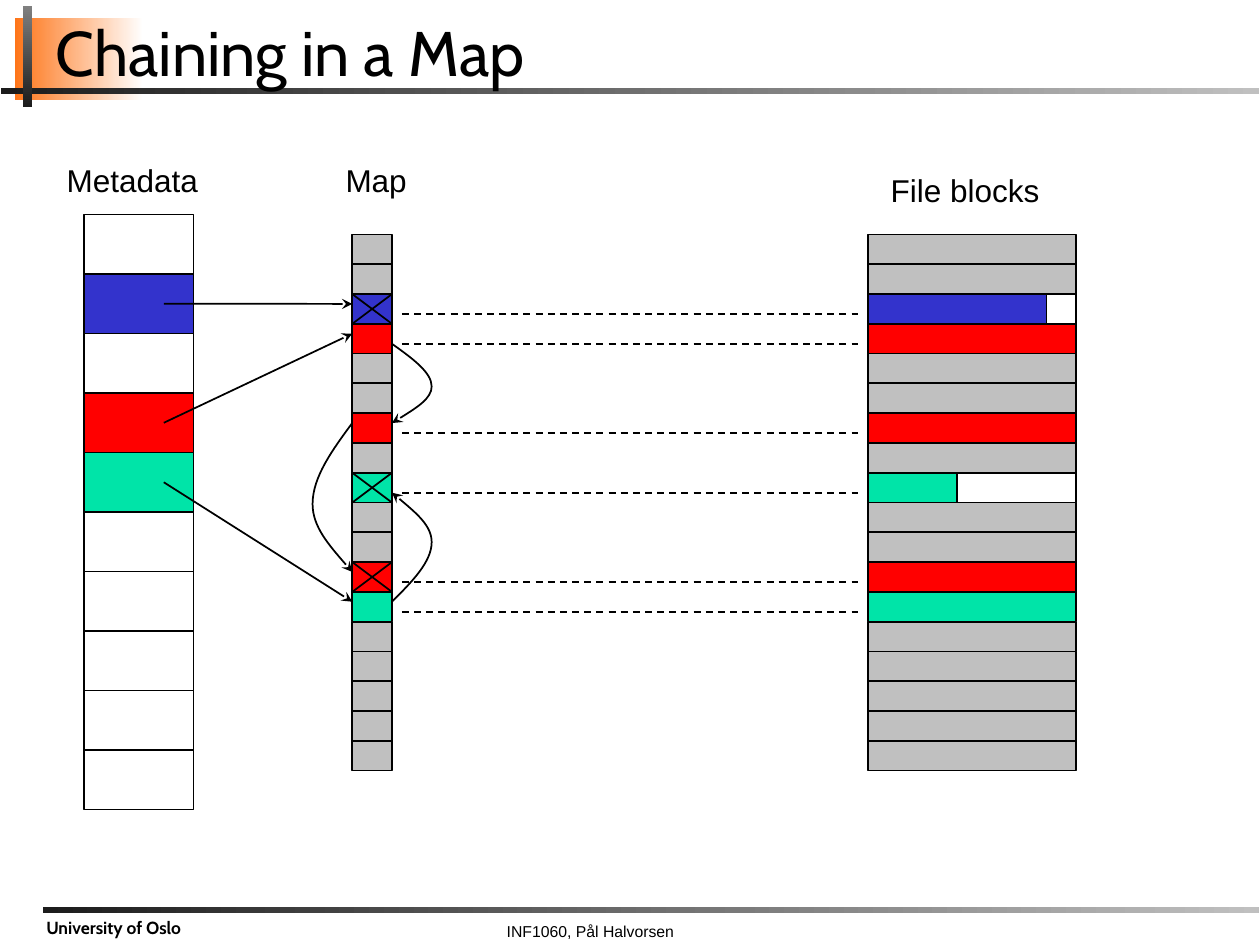
from lxml import etree
from pptx import Presentation
from pptx.dml.color import RGBColor
from pptx.enum.dml import MSO_LINE
from pptx.enum.shapes import MSO_CONNECTOR, MSO_SHAPE
from pptx.enum.text import MSO_ANCHOR, MSO_AUTO_SIZE, PP_ALIGN
from pptx.oxml.ns import qn
from pptx.util import Pt

COLORS = {
    "black": "000000", "dark": "1C1C1C", "mid": "808080", "grey": "C0C0C0",
    "orange": "FE7519", "white": "FFFFFF",
    "blue": "3333CC", "red": "FF0000", "green": "00E4A8",
}

META_LEFT, META_TOP, META_WIDTH, META_ROW = 48.2, 122.6, 62.4, 34
MAP_LEFT, MAP_RIGHT = 201.3, 224
BLOCK_LEFT, BLOCK_WIDTH = 496, 119
TOP, ROW, ROWS = 134, 17.02, 18
BULGE = 22.7

META_COLORS = {1: "blue", 3: "red", 4: "green"}
USED_ROWS = {2: "blue", 3: "red", 6: "red", 8: "green", 11: "red", 12: "green"}
CHAIN_ENDS = (2, 8, 11)
PART_FILLED = {2: 102, 8: 51}  # row: width of the used part
POINTERS = {1: 2, 3: 3, 4: 12}  # metadata row: first map row
CHAINS = [  # edge, bulge, start, turn and end in map rows
    (MAP_RIGHT, BULGE, 12.33, 10.33, 8.67),
    (MAP_RIGHT, BULGE, 3.67, 5.1, 6.33),
    (MAP_LEFT, -BULGE, 6.33, 9.05, 11.33),
]


def rgb(name):
    return RGBColor.from_string(COLORS[name])


def row_y(row):
    """Vertical place of a map row, which may be fractional."""
    return TOP + ROW * row


class SlideBuilder:
    def __init__(self, slide, font="Arial", line_width=1):
        self.s = slide
        self.font = font
        self.line_width = line_width

    def style_line(self, line, arrow=False, dash=False):
        line.color.rgb = rgb("black")
        line.width = Pt(self.line_width)
        if dash:
            line.dash_style = MSO_LINE.DASH
        if arrow:
            etree.SubElement(line._get_or_add_ln(), qn("a:tailEnd"), type="stealth")

    def rect(self, x, y, w, h):
        sp = self.s.shapes.add_shape(MSO_SHAPE.RECTANGLE, Pt(x), Pt(y), Pt(w), Pt(h))
        sp.shadow.inherit = False
        return sp

    def cell(self, x, y, w, h, color=None):
        sp = self.rect(x, y, w, h)
        if color:
            sp.fill.solid()
            sp.fill.fore_color.rgb = rgb(color)
        else:
            sp.fill.background()
        self.style_line(sp.line)

    def gradient_bar(self, x, y, w, h, start, end, rotation=0):
        sp = self.rect(x, y, w, h)
        sp.rotation = rotation
        sp.line.fill.background()
        sp.fill.gradient()
        sp.fill.gradient_angle = 0
        for stop, color in zip(sp.fill.gradient_stops, (start, end)):
            stop.color.rgb = rgb(color)

    def line(self, x1, y1, x2, y2, **style):
        c = self.s.shapes.add_connector(
            MSO_CONNECTOR.STRAIGHT, Pt(x1), Pt(y1), Pt(x2), Pt(y2))
        self.style_line(c.line, **style)
        etree.SubElement(c._element.spPr, qn("a:effectLst"))

    def curve(self, edge, bulge, start, turn, end):
        """Arrow that leaves a column edge, swings out by bulge and returns."""
        far, half = edge + bulge, edge + bulge / 2
        out, back = (turn - start) / 3, (end - turn) / 3
        points = [(half, start + out), (far, start + 2 * out), (far, turn),
                  (far, turn + back), (half, turn + 2 * back), (edge, end)]
        fb = self.s.shapes.build_freeform(Pt(edge), Pt(start))
        fb.add_line_segments([(Pt(x), Pt(y)) for x, y in points], close=False)
        sp = fb.convert_to_shape()
        sp.shadow.inherit = False
        sp.fill.background()
        self.style_line(sp.line, arrow=True)
        path = sp._element.find(".//" + qn("a:path"))
        segments = path.findall(qn("a:lnTo"))
        for i in range(0, len(segments), 3):
            bezier = etree.SubElement(path, qn("a:cubicBezTo"))
            for segment in segments[i:i + 3]:
                bezier.append(segment[0])
                path.remove(segment)

    def add_run(self, p, text, size, font=None, bold=False):
        r = p.add_run()
        r.text = text
        r.font.size = Pt(size)
        r.font.name = font or self.font
        r.font.bold = bold
        r.font.color.rgb = rgb("black")

    def text(self, x, y, w, h, text, size, align=PP_ALIGN.CENTER, wrap=False,
             top=3.6, **run_style):
        tf = self.s.shapes.add_textbox(Pt(x), Pt(y), Pt(w), Pt(h)).text_frame
        tf.word_wrap = wrap
        tf.auto_size = MSO_AUTO_SIZE.SHAPE_TO_FIT_TEXT
        tf.margin_top = Pt(top)
        p = tf.paragraphs[0]
        p.alignment = align
        self.add_run(p, text, size, **run_style)

    def title(self, x, y, w, h, text):
        sp = self.s.shapes.title
        sp.left, sp.top, sp.width, sp.height = Pt(x), Pt(y), Pt(w), Pt(h)
        tf = sp.text_frame
        tf.auto_size = MSO_AUTO_SIZE.NONE
        tf.vertical_anchor = MSO_ANCHOR.BOTTOM
        tf.margin_right = Pt(2.9)
        p = tf.paragraphs[0]
        p.alignment = PP_ALIGN.LEFT
        p.line_spacing = 0.8
        self.add_run(p, text, 36, font="Cabin")
        sp._element.getparent().append(sp._element)  # in front of the bars


def add_frame(b):
    """Header bars, footer and title."""
    b.gradient_bar(8.6, 10.1, 73.4, 46.8, "orange", "white")
    b.text(136.1, 524.2, 402.5, 16.6, "INF1060, Pål Halvorsen", 9, wrap=True, top=2.2)
    b.gradient_bar(0.7, 50.4, 718.6, 3.6, "dark", "grey")
    b.gradient_bar(-13, 29.6, 57.6, 5, "dark", "mid", rotation=270)
    b.gradient_bar(24.5, 518.4, 694.8, 3.6, "dark", "grey")
    b.text(19.4, 522, 117.4, 17.3, "University of Oslo", 10, PP_ALIGN.LEFT,
           wrap=True, top=2.2, font="Cabin", bold=True)
    b.title(24.5, 10.1, 692.6, 43.9, "Chaining in a Map")


def add_columns(b):
    for row in range(10):
        b.cell(META_LEFT, META_TOP + row * META_ROW, META_WIDTH, META_ROW,
               META_COLORS.get(row))
    for row in range(ROWS):
        y, color = row_y(row), USED_ROWS.get(row, "grey")
        b.cell(MAP_LEFT, y, MAP_RIGHT - MAP_LEFT, ROW, color)
        part = PART_FILLED.get(row)
        b.cell(BLOCK_LEFT, y, BLOCK_WIDTH, ROW, None if part else color)
        if part:
            b.cell(BLOCK_LEFT, y, part, ROW, color)
    b.text(31, 88.6, 89.3, 28.8, "Metadata", 18)
    b.text(190.1, 88.6, 49.7, 28.8, "Map", 18)
    b.text(501.8, 94.3, 99.4, 28.8, "File blocks", 18)


def add_links(b):
    for meta_row, map_row in POINTERS.items():
        b.line(93.6, META_TOP + (meta_row + 0.5) * META_ROW,
               MAP_LEFT, row_y(map_row + 0.33), arrow=True)
    for edge, bulge, *rows in CHAINS:
        b.curve(edge, bulge, *map(row_y, rows))
    for row in USED_ROWS:
        y = row_y(row + 0.67)
        b.line(229.7, y, 490.3, y, dash=True)
    for row in CHAIN_ENDS:
        top, bottom = row_y(row), row_y(row + 1)
        b.line(MAP_LEFT, top, MAP_RIGHT, bottom)
        b.line(MAP_LEFT, bottom, MAP_RIGHT, top)


def main():
    prs = Presentation()
    prs.slide_width, prs.slide_height = Pt(720), Pt(540)
    b = SlideBuilder(prs.slides.add_slide(prs.slide_layouts[5]))
    add_frame(b)
    add_columns(b)
    add_links(b)
    prs.save("out.pptx")


if __name__ == "__main__":
    main()
